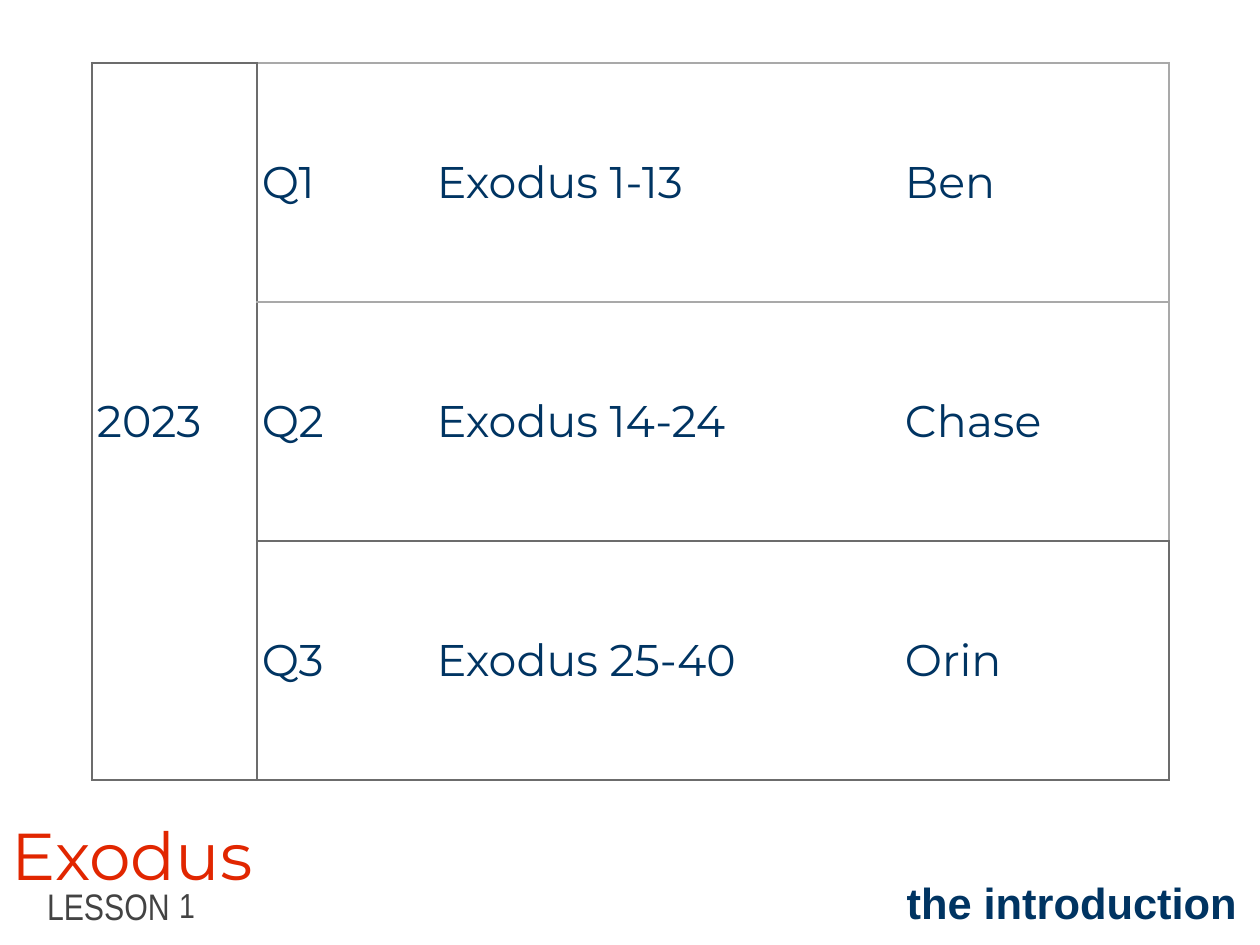
from lxml import etree
from pptx import Presentation
from pptx.dml.color import RGBColor
from pptx.enum.text import MSO_ANCHOR, MSO_AUTO_SIZE, PP_ALIGN
from pptx.oxml.ns import qn
from pptx.util import Pt

PX = 10320
MIDDLE, BOTTOM = MSO_ANCHOR.MIDDLE, MSO_ANCHOR.BOTTOM
LEFT, RIGHT = PP_ALIGN.LEFT, PP_ALIGN.RIGHT
NO_FIT = MSO_AUTO_SIZE.NONE
COLORS = {"navy": "003462", "red": "E12600", "gray": "434343",
          "dark": "6C6C6C", "light": "A9A9A9", "white": "FFFFFF"}
COL_WIDTHS = [165, 175, 468, 269]
ROW_HEIGHT = 239
QUARTERS = [("Q1", "Exodus 1-13", "Ben"),
            ("Q2", "Exodus 14-24", "Chase"),
            ("Q3", "Exodus 25-40", "Orin")]
EDGES = ["light", "light", "dark", "dark"]


def px(*values):
    """Turn pixel lengths into EMU."""
    return [v * PX for v in values]


def write(tf, text, font, size, color, align=LEFT, bold=False):
    """Write one formatted run into the first paragraph."""
    p = tf.paragraphs[0]
    p.alignment = align
    p.space_before = Pt(0)
    r = p.add_run()
    r.text = text
    r.font.name = font
    r.font.size = Pt(size)
    r.font.bold = bold
    r.font.color.rgb = RGBColor.from_string(COLORS[color])


def fill_box(sp, box, text, font, size, color, anchor=MIDDLE, **style):
    """Place a text shape, clear its list formatting and write its text."""
    sp.left, sp.top, sp.width, sp.height = px(*box)
    tf = sp.text_frame
    tf.word_wrap = True
    tf.auto_size = NO_FIT
    tf.vertical_anchor = anchor
    tf.margin_left = tf.margin_top = tf.margin_right = tf.margin_bottom = 4 * PX
    pPr = tf.paragraphs[0]._p.get_or_add_pPr()
    pPr.set("marL", "0")
    pPr.set("indent", "0")
    etree.SubElement(pPr, qn("a:buNone"))
    write(tf, text, font, size, color, **style)


def set_borders(cell, left=None, right=None, top=None, bottom=None):
    """Draw the four borders of a cell, leaving out those without a colour."""
    tcPr = cell._tc.get_or_add_tcPr()
    sides = zip("LRTB", (left, right, top, bottom))
    for i, (side, color) in enumerate(sides):
        ln = etree.Element(qn(f"a:ln{side}"), w=str(Pt(2)))
        if color:
            fill = etree.SubElement(ln, qn("a:solidFill"))
            etree.SubElement(fill, qn("a:srgbClr"), val=COLORS[color])
        else:
            etree.SubElement(ln, qn("a:noFill"))
        tcPr.insert(i, ln)


def fill_cell(cell, text, **borders):
    """Write a table cell and set its fill, margins and borders."""
    cell.vertical_anchor = MIDDLE
    cell.margin_left = cell.margin_top = cell.margin_right = cell.margin_bottom = 5 * PX
    cell.fill.solid()
    cell.fill.fore_color.rgb = RGBColor.from_string(COLORS["white"])
    if text:
        write(cell.text_frame, text, "Montserrat", 36, "navy")
    set_borders(cell, **borders)


def add_schedule(s):
    """Add the table of quarters, chapters and teachers."""
    rows, cols = len(QUARTERS), len(COL_WIDTHS)
    box = px(92, 63, sum(COL_WIDTHS), rows * ROW_HEIGHT)
    table = s.shapes.add_table(rows, cols, *box).table
    table.first_row = table.horz_banding = False
    for column, width in zip(table.columns, COL_WIDTHS):
        column.width = width * PX
    for i, quarter in enumerate(QUARTERS):
        table.rows[i].height = ROW_HEIGHT * PX
        fill_cell(table.cell(i, 0), "2023" if i == 0 else "",
                  left="dark", right="dark", top="dark", bottom="dark")
        for j, text in enumerate(quarter, 1):
            fill_cell(table.cell(i, j), text,
                      left="dark" if j == 1 else None,
                      right=EDGES[i] if j == cols - 1 else None,
                      top=EDGES[i], bottom=EDGES[i + 1])
    table.cell(0, 0).merge(table.cell(rows - 1, 0))


def main():
    """Build the lesson slide and save it."""
    prs = Presentation()
    prs.slide_width, prs.slide_height = px(1260, 945)
    s = prs.slides.add_slide(prs.slide_layouts[3])
    title, topic, number = s.placeholders
    fill_box(title, (8, 797, 319, 101), "Exodus", "Montserrat", 53.8, "red", BOTTOM)
    fill_box(s.shapes.add_textbox(0, 0, 0, 0), (43, 878, 136, 55),
             "LESSON", "Arial Narrow", 30, "gray")
    fill_box(topic, (810, 875, 431, 55), "the introduction", "Arial", 35.3, "navy",
             align=RIGHT, bold=True)
    fill_box(number, (175, 882, 146, 46), "1", "Arial Narrow", 28.2, "gray")
    add_schedule(s)
    prs.save("out.pptx")


if __name__ == "__main__":
    main()
